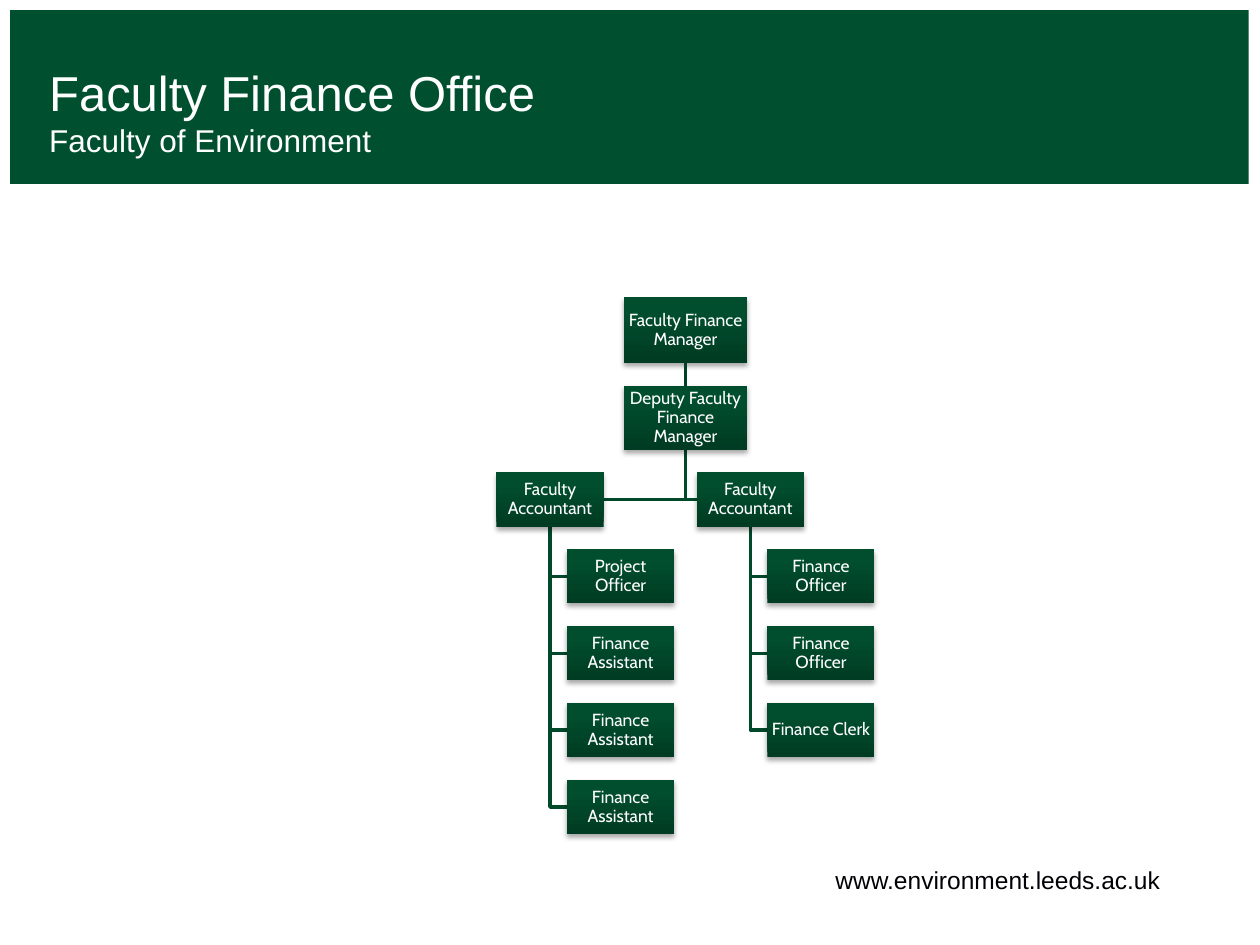
import lxml.etree
import pptx
import pptx.dml.color
import pptx.enum.dml
import pptx.enum.shapes
import pptx.enum.text
import pptx.oxml.ns
import pptx.util

Inches = pptx.util.Inches
Pt = pptx.util.Pt
ALIGN = pptx.enum.text.PP_ALIGN
ANCHOR = pptx.enum.text.MSO_ANCHOR
RECT = pptx.enum.shapes.MSO_SHAPE.RECTANGLE
qn = pptx.oxml.ns.qn

COLORS = {"band": "00502F", "dark": "003C23", "light": "004E2E", "stem": "004026",
          "line": "00492B", "white": "FFFFFF", "text": "000005", "shade": "000000"}


def tint(name):
    return pptx.dml.color.RGBColor.from_string(COLORS[name])


def apply(target, values):
    for key, value in values.items():
        setattr(target, key, value)


class Chart:
    """Style and current slide of an organisation chart."""

    font = "Arial"
    label = "Cabin"
    width = Pt(2)

    def __init__(self, slide):
        self.slide = slide
        self.shapes = slide.shapes

    def words(self, shape, lines, frame, para, color, face):
        """Fill a shape with lines given as (text, size)."""
        body = shape.text_frame
        apply(body, {"word_wrap": True,
                     "auto_size": pptx.enum.text.MSO_AUTO_SIZE.NONE, **frame})
        for i, (text, size) in enumerate(lines):
            item = body.paragraphs[0] if i == 0 else body.add_paragraph()
            item.text = text
            apply(item, para)
            apply(item.font, {"name": face, "size": Pt(size)})
            item.font.color.rgb = tint(color)

    def band(self, *place):
        shape = self.shapes.add_shape(RECT, *map(Inches, place))
        shape.shadow.inherit = False
        shape.fill.solid()
        shape.fill.fore_color.rgb = tint("band")
        shape.line.fill.background()

    def title(self, lines, *place):
        shape = self.shapes.title
        apply(shape, dict(zip(("left", "top", "width", "height"), map(Inches, place))))
        frame = {"vertical_anchor": ANCHOR.BOTTOM, "margin_left": 0, "margin_top": 0,
                 "margin_right": 0, "margin_bottom": Inches(0.04)}
        para = {"alignment": ALIGN.LEFT, "space_before": Pt(0)}
        self.words(shape, lines, frame, para, "white", self.font)
        shape.element.getparent().append(shape.element)  # in front of the band

    def note(self, text, size, *place):
        shape = self.shapes.add_textbox(*map(Inches, place))
        self.words(shape, [(text, size)], {}, {"alignment": ALIGN.CENTER},
                   "text", self.font)

    def box(self, text, *place):
        shape = self.shapes.add_shape(RECT, *map(Inches, place))
        shape.line.fill.background()
        shape.fill.gradient()
        shape.fill.gradient_angle = 90
        for stop, (spot, name) in zip(shape.fill.gradient_stops,
                                      ((0, "dark"), (0.8, "light"))):
            stop.position = spot
            stop.color.rgb = tint(name)
        self.shade(shape)
        edge = Inches(0.01)
        frame = {"vertical_anchor": ANCHOR.MIDDLE, "margin_left": edge,
                 "margin_right": edge, "margin_top": edge, "margin_bottom": edge}
        para = {"alignment": ALIGN.CENTER, "line_spacing": 0.9}
        self.words(shape, [(text, 10)], frame, para, "white", self.label)
        return shape

    def shade(self, shape):
        """Give a shape a soft shadow below."""
        shape.shadow.inherit = False
        effects = shape.element.spPr.find(qn("a:effectLst"))
        outer = lxml.etree.SubElement(
            effects, qn("a:outerShdw"), blurRad=str(Pt(3.1)), dist=str(Pt(1.8)),
            dir="5400000", rotWithShape="0")
        color = lxml.etree.SubElement(outer, qn("a:srgbClr"), val=COLORS["shade"])
        lxml.etree.SubElement(color, qn("a:alpha"), val="35000")

    def elbow(self, start, end):
        """Draw a line down from start, then across to end."""
        (x, y), (right, low) = (tuple(map(Inches, point)) for point in (start, end))
        route = self.shapes.build_freeform(x, y)
        route.add_line_segments([(x, low), (right, low)], close=False)
        shape = route.convert_to_shape()
        shape.shadow.inherit = False
        shape.fill.background()
        shape.line.color.rgb = tint("line")
        shape.line.width = self.width

    def stem(self, upper, lower):
        """Join the bottom of one box to the top of the next."""
        line = self.shapes.add_connector(
            pptx.enum.shapes.MSO_CONNECTOR.STRAIGHT, 0, 0, 0, 0)
        line.begin_connect(upper, 2)
        line.end_connect(lower, 0)
        line.line.color.rgb = tint("stem")
        line.line.width = self.width
        lxml.etree.SubElement(line.element.spPr, qn("a:effectLst"))


def main():
    deck = pptx.Presentation()
    deck.slide_width, deck.slide_height = Inches(10), Inches(7.5)
    chart = Chart(deck.slides.add_slide(deck.slide_layouts[5]))

    chart.band(0.08, 0.08, 9.83, 1.38)
    chart.title([("Faculty Finance Office", 28), ("Faculty of Environment", 18)],
                0.39, 0.49, 5.33, 0.81)
    chart.note("www.environment.leeds.ac.uk", 14, 6.1, 6.82, 3.64, 0.5)

    wide, tall, pitch, shift = 0.85, 0.43, 0.61, 0.56
    top, mid = 3.75, 5.44
    teams = [
        (3.94, 3.94 + wide, ["Project Officer"] + ["Finance Assistant"] * 3),
        (5.53, 5.53, ["Finance Officer", "Finance Officer", "Finance Clerk"]),
    ]
    for left, side, staff in teams:
        chart.elbow((mid, 3.57), (side, top + tall / 2))
        for row in range(1, len(staff) + 1):
            chart.elbow((left + wide / 2, top + tall),
                        (left + shift, top + row * pitch + tall / 2))

    head = chart.box("Faculty Finance Manager", 4.95, 2.36, 0.98, 0.52)
    deputy = chart.box("Deputy Faculty Finance Manager", 4.95, 3.06, 0.98, 0.51)
    chart.stem(head, deputy)
    for left, _, staff in teams:
        chart.box("Faculty Accountant", left, top, wide, tall)
        for row, role in enumerate(staff, 1):
            chart.box(role, left + shift, top + row * pitch, wide, tall)

    deck.save("out.pptx")


if __name__ == "__main__":
    main()
